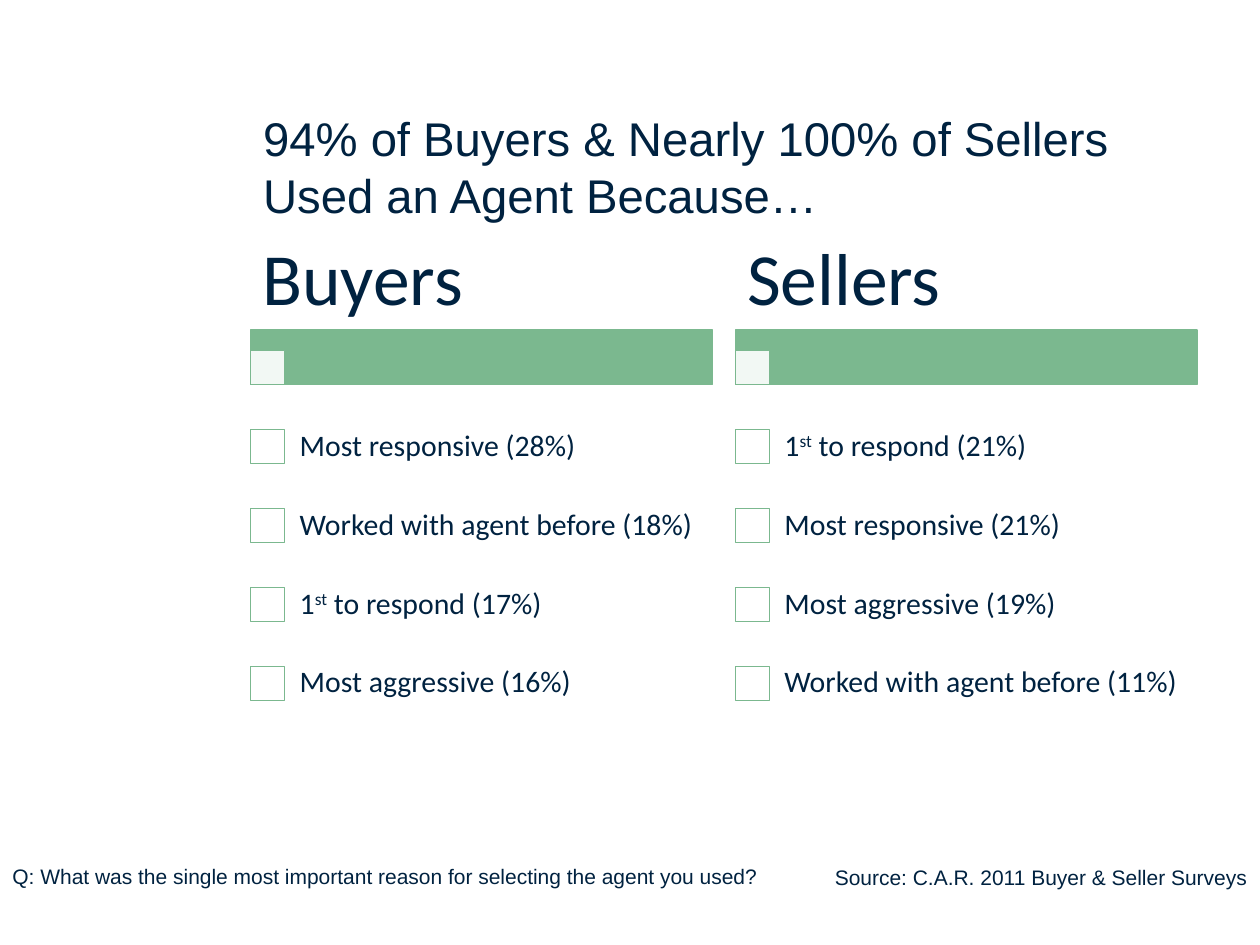
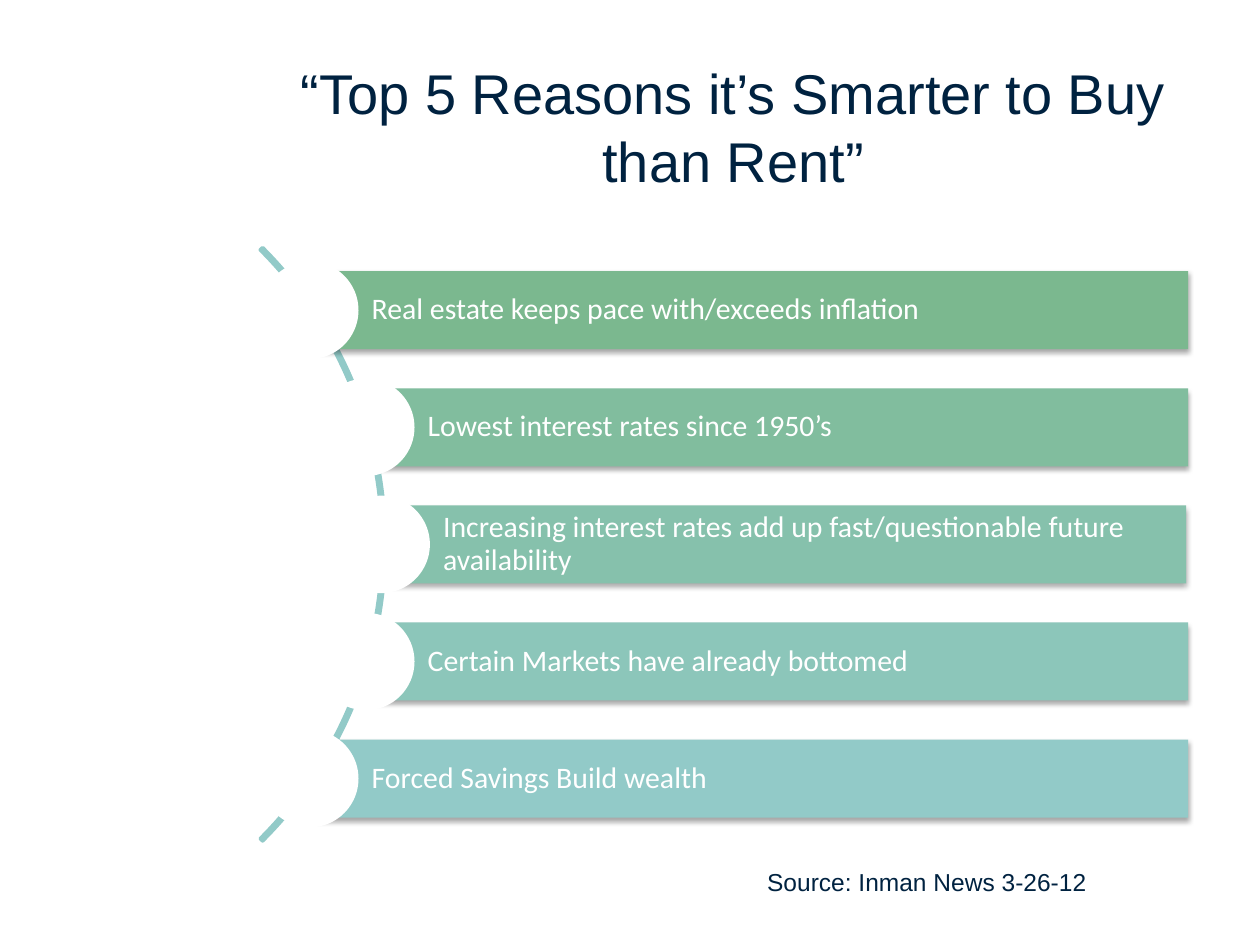
from lxml import etree
from pptx import Presentation
from pptx.dml.color import RGBColor
from pptx.enum import shapes, text
from pptx.oxml import ns
from pptx.util import Pt

INK = {"navy": "002240", "green": "7BB88F", "teal": "92CAC8",
       "white": "FFFFFF", "black": "000000"}
HEAD, BODY = "Arial", "Calibri"
KIND = shapes.MSO_SHAPE
LEFT, CENTER, RIGHT = (text.PP_ALIGN.LEFT, text.PP_ALIGN.CENTER,
                       text.PP_ALIGN.RIGHT)
TOP, MIDDLE = text.MSO_ANCHOR.TOP, text.MSO_ANCHOR.MIDDLE
EDGE = (7.2, 3.6, 7.2, 3.6)

COLUMNS = [
    ("Buyers", ["Most responsive (28%)", "Worked with agent before (18%)",
                "1^st^ to respond (17%)", "Most aggressive (16%)"]),
    ("Sellers", ["1^st^ to respond (21%)", "Most responsive (21%)",
                 "Most aggressive (19%)", "Worked with agent before (11%)"]),
]
# Text, left edge, width and colour of each bar
REASONS = [
    ("Real estate keeps pace with/exceeds inflation", 177, 502, INK["green"]),
    ("Lowest interest rates since 1950’s", 209, 470, "81BD9E"),
    ("Increasing interest rates add up fast/questionable future availability",
     217.8, 460, "86C1AC"),
    ("Certain Markets have already bottomed", 209, 470, "8CC6BA"),
    ("Forced Savings Build wealth", 177, 502, INK["teal"]),
]


def rgb(code):
    return RGBColor.from_string(code)


def sub(node, tag, **attrs):
    return etree.SubElement(node, ns.qn(tag), attrs)


def write(shape, words, size, face=HEAD, color=INK["navy"], align=LEFT,
          anchor=TOP, inset=EDGE, lead=None):
    """Fill a shape with one paragraph; words between ^ marks are raised."""
    frame = shape.text_frame
    frame.word_wrap = True
    frame.vertical_anchor = anchor
    (frame.margin_left, frame.margin_top,
     frame.margin_right, frame.margin_bottom) = map(Pt, inset)
    para = frame.paragraphs[0]
    para.alignment = align
    if lead:
        para.line_spacing = lead
    for i, part in enumerate(words.split("^")):
        run = para.add_run()
        run.text = part
        run.font.size = Pt(size)
        run.font.name = face
        run.font.color.rgb = rgb(color)
        if i % 2:
            run.font._element.set("baseline", "30000")


def label(slide, box, words, size, **style):
    write(slide.shapes.add_textbox(*map(Pt, box)), words, size, **style)


def draw(slide, kind, box, fill=None, line=None, width=0.75):
    shape = slide.shapes.add_shape(kind, *map(Pt, box))
    shape.shadow.inherit = False
    if fill:
        shape.fill.solid()
        shape.fill.fore_color.rgb = rgb(fill)
    else:
        shape.fill.background()
    if line:
        shape.line.color.rgb = rgb(line)
        shape.line.width = Pt(width)
    else:
        shape.line.fill.background()
    return shape


def fade(shape, percent):
    """Set the opacity of a solid fill."""
    color = shape._element.spPr.find(".//" + ns.qn("a:srgbClr"))
    sub(color, "a:alpha", val=str(percent * 1000))


def shade(shape):
    """Give a shape a soft shadow straight below it."""
    effects = shape._element.spPr.find(ns.qn("a:effectLst"))
    outer = sub(effects, "a:outerShdw", blurRad=str(Pt(3.1)),
                dist=str(Pt(1.8)), dir="5400000", rotWithShape="0")
    color = sub(outer, "a:srgbClr", val=INK["black"])
    sub(color, "a:alpha", val="35000")


def title(slide, top, words, size, align=LEFT):
    label(slide, (143.3, top, 551.5, 54.7), words, size, align=align)


def column(slide, left, top, width, name, items):
    """Heading, green band and a checklist."""
    side, pitch = 19.4, 45.1

    def tick(y):
        return draw(slide, KIND.RECTANGLE, (left, y, side, side),
                    INK["white"], INK["green"])

    draw(slide, KIND.RECTANGLE, (left, top + 55.4, width, 31),
         INK["green"], INK["green"])
    fade(tick(top + 67), 90)
    label(slide, (left, top, width, 55.4), name, 42, face=BODY,
          anchor=MIDDLE, inset=(6.6, 4.4, 6.6, 4.4), lead=0.9)
    for i, item in enumerate(items):
        row = top + 99.4 + i * pitch
        tick(row + 12.9)
        label(slide, (left + 18.4, row, width - 18.4, pitch), item, 17,
              face=BODY, anchor=MIDDLE, inset=(9.6,) * 4, lead=0.9)


def arc(slide, left, top, size):
    shape = draw(slide, KIND.BLOCK_ARC, (left, top, size, size),
                 line=INK["teal"], width=2)
    for i, value in enumerate((189, 27, 0.004)):
        shape.adjustments[i] = value


def bars(slide, top):
    """Stacked bars, each with a white disc centred on its left end."""
    high, pitch, disc = 44.6, 66.9, 55.7
    for i, (words, left, width, fill) in enumerate(REASONS):
        y = top + i * pitch
        bar = draw(slide, KIND.RECTANGLE, (left, y, width, high), fill)
        shade(bar)
        write(bar, words, 17, face=BODY, color=INK["white"], anchor=MIDDLE,
              inset=(35.4, 3.4, 3.4, 3.4), lead=0.9)
        draw(slide, KIND.OVAL, (left - disc / 2, y + (high - disc) / 2,
                                disc, disc), INK["white"])


def survey(slide):
    title(slide, 59, "94% of Buyers & Nearly 100% of Sellers "
          "Used an Agent Because…", 27)
    for i, (name, items) in enumerate(COLUMNS):
        column(slide, 143.3 + i * 277, 133.2, 263.7, name, items)
    label(slide, (424.8, 490.5, 295.2, 21.8),
          "Source: C.A.R. 2011 Buyer & Seller Surveys", 12, align=RIGHT)
    label(slide, (0, 489.8, 444, 21.8), "Q: What was the single most "
          "important reason for selecting the agent you used?", 12)


def reasons(slide):
    title(slide, 30.2, "“Top 5 Reasons it’s Smarter to Buy than Rent”",
          32, CENTER)
    arc(slide, -259.2, 71.3, 479.5)
    bars(slide, 155)
    label(slide, (431.3, 491.8, 288, 24.2), "Source: Inman News 3-26-12", 14)


def main():
    deck = Presentation()
    deck.slide_width, deck.slide_height = Pt(720), Pt(540)
    for build in (survey, reasons):
        build(deck.slides.add_slide(deck.slide_layouts[6]))
    deck.save("out.pptx")


if __name__ == "__main__":
    main()
